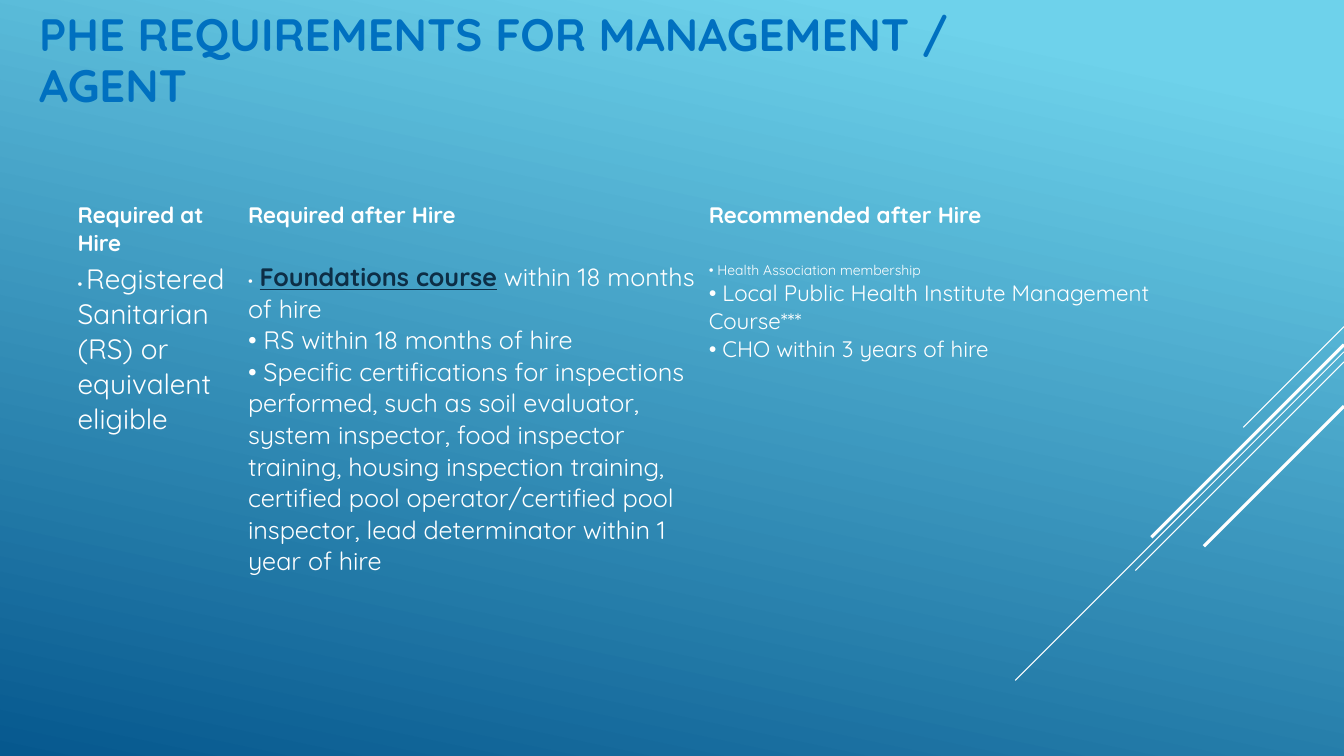
from copy import deepcopy
from pptx import Presentation
from pptx import util as u
from pptx.dml import color
from pptx.enum import shapes, text
from pptx.oxml import ns, xmlchemy

HUES = {"sky": "6ED2EB", "sea": "06588E", "title": "0070C0",
        "white": "FFFFFF", "navy": "0D2E46"}


def tint(name):
    return color.RGBColor.from_string(HUES[name])


def write(para, runs):
    for words, size, hue, form in runs:
        for num, part in enumerate(words.split("\n")):
            if num:
                para.add_line_break()
                para._p[-1].append(deepcopy(run._r.rPr))
            if not part:
                continue
            run = para.add_run()
            run.text = part
            run.font.color.rgb = tint(hue)
            look = {"name": "Quicksand", "size": u.Pt(size), **form}
            for key, val in look.items():
                setattr(run.font, key, val)


deck = Presentation()
deck.slide_width = u.Inches(13.33)
deck.slide_height = u.Inches(7.5)
slide = deck.slides.add_slide(deck.slide_layouts[6])

fill = slide.background.fill
fill.gradient()
fill.gradient_angle = 258
for stop, (hue, pos) in zip(fill.gradient_stops, [("sky", 0.1), ("sea", 1)]):
    stop.color.rgb = tint(hue)
    stop.position = pos

right = 13.33
for top, run_in, wide in [(3.24, 1, 0.75), (3.49, 3.26, 0.75),
                          (3.59, 2.07, 0.75), (3.42, 1.91, 2.25),
                          (4.03, 1.39, 2.25)]:
    ends = [u.Inches(n) for n in (right, top, right - run_in, top + run_in)]
    line = slide.shapes.add_connector(shapes.MSO_CONNECTOR.STRAIGHT, *ends)
    line.line.color.rgb = tint("white")
    line.line.width = u.Pt(wide)
    line._element.spPr.append(xmlchemy.OxmlElement("a:effectLst"))

bold = {"bold": True}
plain = {"bold": False}
link = {"bold": True, "underline": True}

box = slide.shapes.add_textbox(*[u.Inches(n) for n in (0.29, 0.28, 9.33, 1.2)])
frame = box.text_frame
for key, val in {"word_wrap": True,
                 "vertical_anchor": text.MSO_ANCHOR.MIDDLE}.items():
    setattr(frame, key, val)
head = frame.paragraphs[0]
head.line_spacing = 0.95
write(head, [("PHE REQUIREMENTS FOR MANAGEMENT / AGENT\n", 32.4, "title", bold)])

cells = [
    [[("Required at Hire", 16, "white", bold)],
     [("Required after Hire", 16, "white", bold)],
     [("Recommended after Hire", 16, "white", bold)]],
    [[("• ", 10, "white", plain),
      ("Registered Sanitarian (RS) or equivalent eligible", 20, "white", plain)],
     [("•", 10, "white", plain),
      (" ", 18, "white", plain),
      ("Foundations course", 18, "navy", link),
      (" within 18 months of hire\n• RS within 18 months of hire\n"
       "• Specific certifications for inspections performed, such as soil "
       "evaluator, system inspector, food inspector training, housing "
       "inspection training, certified pool operator/certified pool "
       "inspector, lead determinator within 1 year of hire",
       18, "white", plain)],
     [("• Health Association membership\n", 10, "white", plain),
      ("• Local Public Health Institute Management Course***\n"
       "• CHO within 3 years of hire", 16, "white", plain)]],
]
place = [u.Inches(n) for n in (0.72, 1.97, 10.83, 5.08)]
table = slide.shapes.add_table(2, 3, *place).table
table.first_row = table.horz_banding = False
style = table._tbl.tblPr.find(ns.qn("a:tableStyleId"))
style.text = "{2D5ABB26-0587-4C30-8999-92F81FD0307C}"
for col, wide in zip(table.columns, (1.69, 4.57, 4.57)):
    col.width = u.Inches(wide)
for row, high, line in zip(table.rows, (0.44, 4.64), cells):
    row.height = u.Inches(high)
    for cell, runs in zip(row.cells, line):
        cell.fill.background()
        for side, gap in {"left": 0.05, "right": 0.05,
                          "top": 0.03, "bottom": 0.03}.items():
            setattr(cell, "margin_" + side, u.Inches(gap))
        write(cell.text_frame.paragraphs[0], runs)

deck.save("out.pptx")
